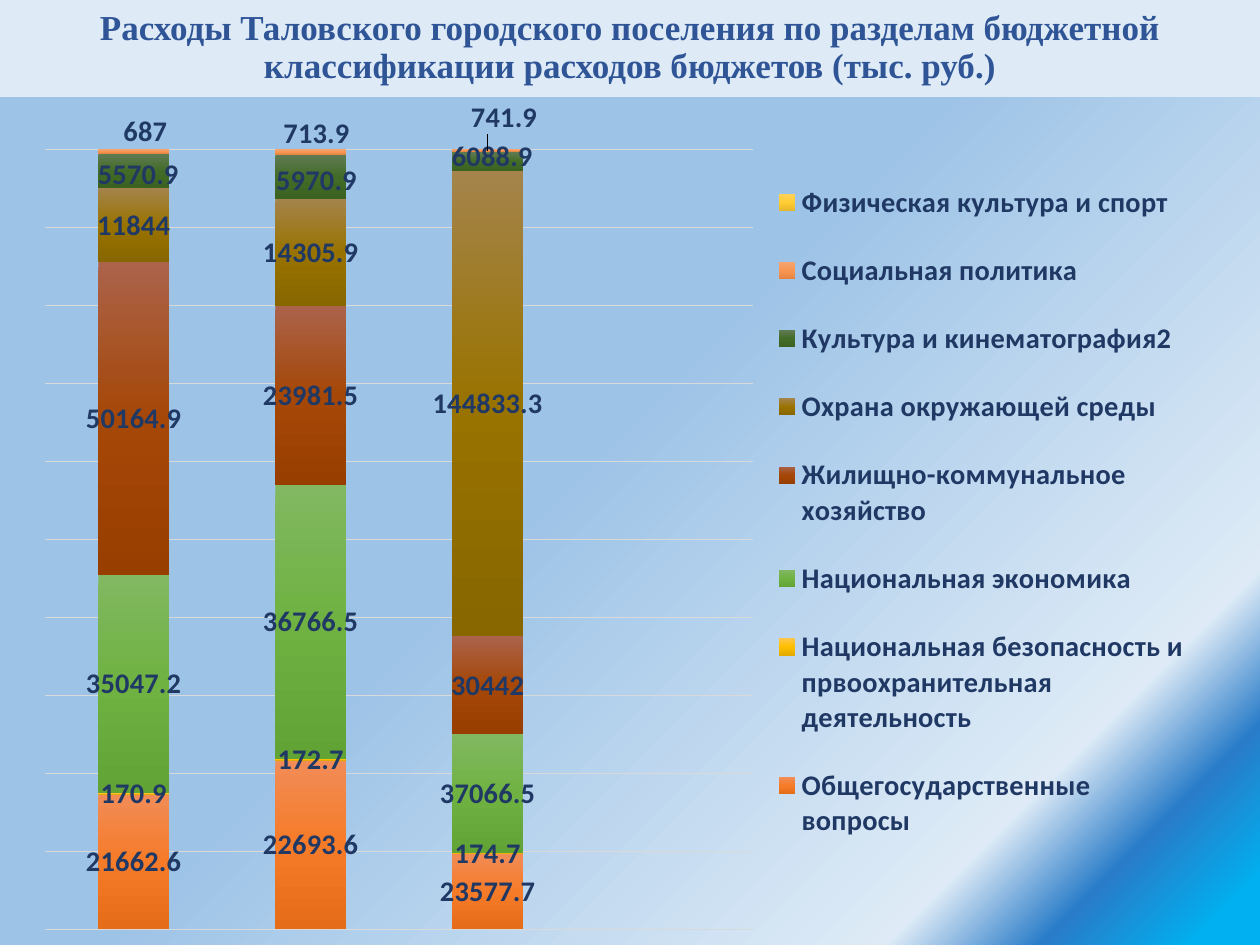
from lxml import etree
from pptx import Presentation
from pptx import util as u
from pptx.chart.data import CategoryChartData
from pptx.dml.color import RGBColor
from pptx.enum import chart as ch, shapes, text
from pptx.oxml import parse_xml
from pptx.oxml.ns import nsdecls, qn

# Content
TITLE = ("Расходы Таловского городского поселения по разделам бюджетной "
         "классификации расходов бюджетов (тыс. руб.)")
CATEGORIES = ["1", "2", "3", ""]
SECTIONS = [  # name, values, gradient from top to bottom
    ("Общегосударственные вопросы",
     (21662.6, 22693.6, 23577.7), ("F18C57", "F67B28", "E56C19")),
    ("Национальная безопасность и првоохранительная деятельность",
     (170.9, 172.7, 174.7), ("FFC64B", "FFC000", "E3AB00")),
    ("Национальная экономика",
     (35047.2, 36766.5, 37066.5), ("81B861", "6FB242", "62A336")),
    ("Жилищно-коммунальное хозяйство",
     (50164.9, 23981.5, 30442), ("AB634B", "A54707", "983E00")),
    ("Охрана окружающей среды",
     (11844, 14305.9, 144833.3), ("A4844B", "997300", "886600")),
    ("Культура и кинематография2",
     (5570.9, 5970.9, 6088.9), ("607B53", "436B28", "3B6220")),
    ("Социальная политика",
     (687, 713.9, 741.9), ("F4A371", "F89653", "E58341")),
    ("Физическая культура и спорт",
     (0, 0, 0), ("FFD15A", "FFCD33", "E5B72B")),
]
# Label shifts as fractions of the chart, one per column
LABEL_SHIFTS = {
    "Культура и кинематография2": [(0.004, 0.004), (0.005, 0.004), (0.004, -0.006)],
    "Социальная политика": [(0.01, -0.024), (0.005, -0.022), (0.014, -0.04)],
}
BACKGROUND = [(3, "00B0F0"), (10, "297CC8"), (17, "DEEBF7"),
              (53, "9DC3E6"), (96, "9DC3E6")]
CORNER_PATH = ('<a:path path="circle"><a:fillToRect l="100000" t="100000"/></a:path>'
               '<a:tileRect r="-100000" b="-100000"/>')
DOWNWARD = '<a:lin ang="5400000" scaled="0"/>'

PALE = RGBColor(0xDE, 0xEB, 0xF7)
TITLE_BLUE = RGBColor(0x2F, 0x55, 0x97)
NAVY = RGBColor(0x20, 0x38, 0x64)
GRID = RGBColor(0xD9, 0xD9, 0xD9)


def set_font(font, name, size, color):
    font.name, font.size, font.bold = name, u.Pt(size), True
    font.color.rgb = color


def add_text(box, words, *, name, size, color, spacing):
    frame = box.text_frame
    frame.word_wrap = True
    frame.vertical_anchor = text.MSO_ANCHOR.MIDDLE
    para = frame.paragraphs[0]
    para.alignment = text.PP_ALIGN.CENTER
    para.line_spacing = spacing
    span = para.add_run()
    span.text = words
    set_font(span.font, name, size, color)


def apply_gradient(fill, parent, stops, direction):
    """Swap the solid fill below parent for a gradient."""
    fill.solid()
    fill.fore_color.rgb = PALE
    solid = next(parent.iter(qn("a:solidFill")))
    marks = "".join(f'<a:gs pos="{pos * 1000}"><a:srgbClr val="{color}"/></a:gs>'
                    for pos, color in stops)
    solid.getparent().replace(solid, parse_xml(
        f'<a:gradFill {nsdecls("a")} rotWithShape="1"><a:gsLst>{marks}</a:gsLst>'
        f'{direction}</a:gradFill>'))


def make_layout(**values):
    layout = etree.Element(qn("c:layout"))
    manual = etree.SubElement(layout, qn("c:manualLayout"))
    for tag, value in values.items():
        etree.SubElement(manual, qn(f"c:{tag}")).set("val", str(value))
    return layout


def place(part, layout, after):
    """Put a layout into a chart part, after the named child or first."""
    for old in part.findall(qn("c:layout")):
        part.remove(old)
    anchor = part.find(qn(after)) if after else None
    part.insert(0 if anchor is None else part.index(anchor) + 1, layout)


deck = Presentation()
deck.slide_width, deck.slide_height = u.Pt(720), u.Pt(540)
page = deck.slides.add_slide(deck.slide_layouts[6])
apply_gradient(page.background.fill, page.element, BACKGROUND, CORNER_PATH)

# Title band
band = page.shapes.add_shape(shapes.MSO_SHAPE.RECTANGLE, 0, 0, u.Pt(720), u.Pt(55.4))
band.shadow.inherit = False
band.fill.solid()
band.fill.fore_color.rgb = PALE
band.line.color.rgb = PALE
band.line.width = u.Pt(0.75)
add_text(band, TITLE, name="Times New Roman", size=20, color=TITLE_BLUE, spacing=0.9)

# Chart
data = CategoryChartData()
data.categories = CATEGORIES
for name, values, _ in SECTIONS:
    data.add_series(name, (*values, None))
chart = page.shapes.add_chart(
    ch.XL_CHART_TYPE.COLUMN_STACKED_100, u.Pt(15.1), u.Pt(56.9),
    u.Pt(671), u.Pt(479.5), data).chart
chart.has_title = False
set_font(chart.font, "Calibri", 16.2, NAVY)
chart.category_axis.visible = chart.value_axis.visible = False
chart.value_axis.has_major_gridlines = True
grid_line = chart.value_axis.major_gridlines.format.line
grid_line.color.rgb = GRID
grid_line.width = u.Pt(0.75)
plot = chart.plots[0]
plot.gap_width, plot.overlap, plot.vary_by_categories = 150, 100, False

# Series fills and labels
for series, (name, values, colors) in zip(plot.series, SECTIONS):
    apply_gradient(series.format.fill, series.format.fill._xPr,
                   zip((0, 50, 100), colors), DOWNWARD)
    if not any(values):
        continue
    labels = series.data_labels
    labels.show_value = True
    set_font(labels.font, "Calibri", 16.2, NAVY)
    for column, (dx, dy) in enumerate(LABEL_SHIFTS.get(name, [])):
        set_font(series.points[column].data_label.font, "Calibri", 16.2, NAVY)
        label = series._element.findall(".//" + qn("c:dLbl"))[column]
        place(label, make_layout(x=dx, y=dy), "c:idx")

# Legend and plot area
chart.has_legend = True
legend = chart.legend
legend.position = ch.XL_LEGEND_POSITION.RIGHT
legend.include_in_layout = False
set_font(legend.font, "Calibri", 16.2, NAVY)
place(legend._element, make_layout(xMode="edge", yMode="edge", x=0.645, y=0.06,
                                   w=0.35, h=0.86), "c:legendPos")
place(chart._chartSpace.chart.plotArea,
      make_layout(layoutTarget="inner", xMode="edge", yMode="edge",
                  x=0.016, y=0.057, w=0.603, h=0.932), None)

deck.save("out.pptx")
